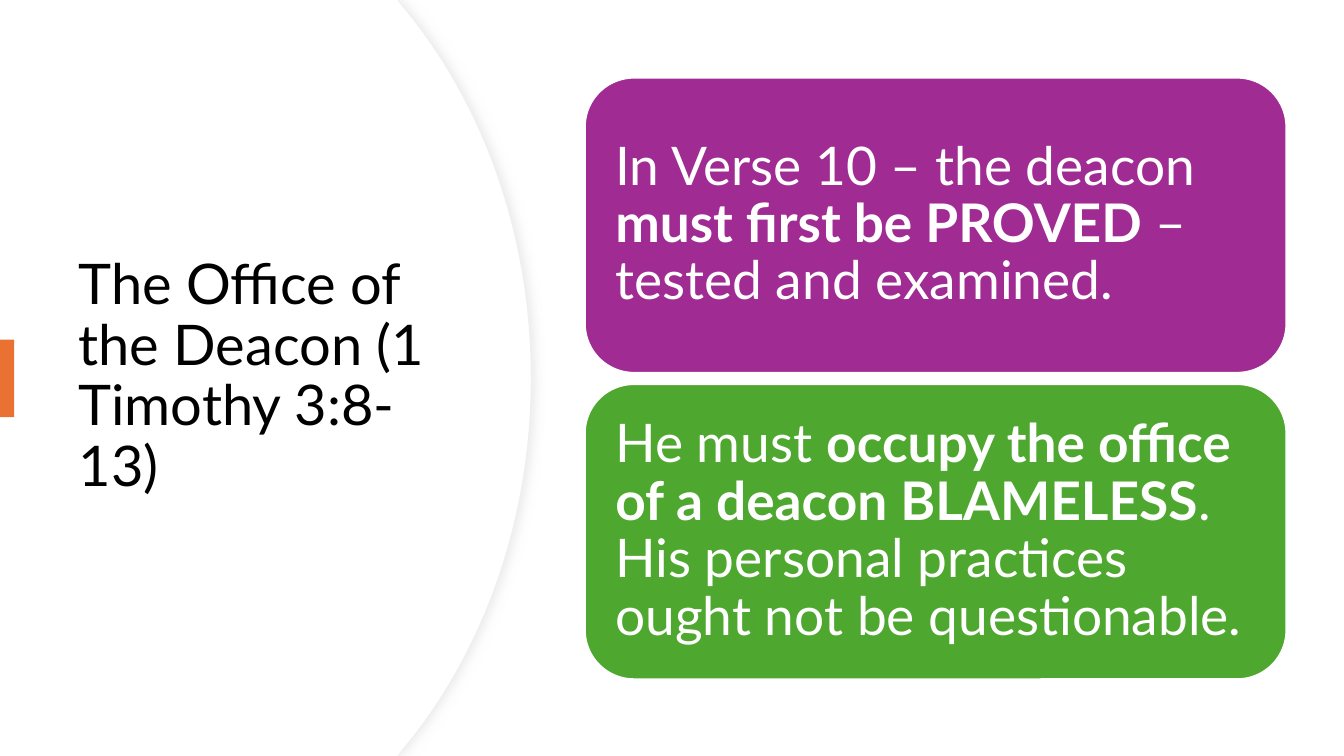
from dataclasses import dataclass

from lxml import etree
from pptx import Presentation
from pptx import util as u
from pptx.dml import color
from pptx.enum import shapes, text
from pptx.oxml import ns

COLORS = {
    "white": "FFFFFF",
    "black": "000000",
    "edge": "EFEFEF",
    "shadow": "D9D9D9",
    "accent": "E97132",
    "purple": "A02B93",
    "green": "4EA72E",
}
FONT = "Lato"
SLIDE_WIDTH, SLIDE_HEIGHT = 13.33, 7.5
CURVE_STEPS = 24
CARD_TOP, CARD_PITCH = 0.77, 3.04


@dataclass
class Phrase:
    wording: str
    bold: bool = False


@dataclass
class Card:
    fill: str
    phrases: list[Phrase]


CARDS = [
    Card("purple", [
        Phrase("In Verse 10 – the deacon "),
        Phrase("must first be PROVED ", True),
        Phrase("– tested and examined."),
    ]),
    Card("green", [
        Phrase("He must "),
        Phrase("occupy the office of a deacon BLAMELESS", True),
        Phrase(". His personal practices ought not be questionable."),
    ]),
]


def rgb(name: str) -> color.RGBColor:
    return color.RGBColor.from_string(COLORS[name])


def paint(shape, fill: str, line: str | None = None, width: float = 0) -> None:
    shape.shadow.inherit = False
    shape.fill.solid()
    shape.fill.fore_color.rgb = rgb(fill)
    if line is None:
        shape.line.fill.background()
    else:
        shape.line.color.rgb = rgb(line)
        shape.line.width = u.Pt(width)


def write(shape, phrases: list[Phrase], size: float, ink: str, inset: float) -> None:
    frame = shape.text_frame
    frame.word_wrap = True
    frame.auto_size = text.MSO_AUTO_SIZE.NONE
    frame.vertical_anchor = text.MSO_ANCHOR.MIDDLE
    frame.margin_left = frame.margin_right = u.Inches(inset)
    frame.margin_top = frame.margin_bottom = u.Inches(inset)
    paragraph = frame.paragraphs[0]
    paragraph.alignment = text.PP_ALIGN.LEFT
    paragraph.line_spacing = 0.9
    for phrase in phrases:
        run = paragraph.add_run()
        run.text = phrase.wording
        run.font.name = FONT
        run.font.size = u.Pt(size)
        run.font.bold = phrase.bold
        run.font.color.rgb = rgb(ink)


def bezier(start: float, first: float, second: float, end: float, t: float) -> float:
    s = 1 - t
    return s**3 * start + 3 * s**2 * t * first + 3 * s * t**2 * second + t**3 * end


def add_curved_panel(slide, right: float):
    middle = SLIDE_HEIGHT / 2
    shoulder = right - 1.26
    upper = [
        (bezier(shoulder, right - 0.48, right, right, step / CURVE_STEPS),
         bezier(0.08, 1.02, 2.32, middle, step / CURVE_STEPS))
        for step in range(CURVE_STEPS + 1)
    ]
    lower = [(x, SLIDE_HEIGHT - y) for x, y in reversed(upper[:-1])]
    outline = [(3.94, 0), *upper, *lower, (3.94, SLIDE_HEIGHT), (0, SLIDE_HEIGHT)]
    builder = slide.shapes.build_freeform(0, 0, scale=u.Inches(1) / 1000)
    builder.add_line_segments([(round(x * 1000), round(y * 1000)) for x, y in outline])
    return builder.convert_to_shape()


def add_shadow(shape) -> None:
    effects = shape._element.spPr.find(ns.qn("a:effectLst"))
    shadow = etree.SubElement(
        effects, ns.qn("a:outerShdw"),
        blurRad=str(u.Pt(7)), dist=str(u.Pt(3)), dir="0", algn="l", rotWithShape="0",
    )
    tint = etree.SubElement(shadow, ns.qn("a:srgbClr"), val=COLORS["shadow"])
    etree.SubElement(tint, ns.qn("a:alpha"), val="50000")


def add_title(slide) -> None:
    title = slide.shapes.title
    title.left, title.top = u.Inches(0.68), u.Inches(1.27)
    title.width, title.height = u.Inches(3.94), u.Inches(4.95)
    write(title, [Phrase("The Office of the Deacon (1 Timothy 3:8-13)")], 40, "black", 0.1)
    slide.shapes._spTree.append(title._element)


def add_card(slide, card: Card, top: float) -> None:
    shape = slide.shapes.add_shape(
        shapes.MSO_SHAPE.ROUNDED_RECTANGLE,
        u.Inches(5.8), u.Inches(top), u.Inches(6.96), u.Inches(2.93),
    )
    paint(shape, card.fill, "white", 1.5)
    write(shape, card.phrases, 38, "white", 0.16)


def main() -> None:
    presentation = Presentation()
    presentation.slide_width = u.Inches(SLIDE_WIDTH)
    presentation.slide_height = u.Inches(SLIDE_HEIGHT)
    slide = presentation.slides.add_slide(presentation.slide_layouts[5])

    edged_panel = add_curved_panel(slide, 5.27)
    paint(edged_panel, "white", "edge", 0.75)
    add_shadow(edged_panel)
    paint(add_curved_panel(slide, 5.26), "white")

    add_title(slide)
    marker = slide.shapes.add_shape(
        shapes.MSO_SHAPE.RECTANGLE,
        u.Inches(0), u.Inches(3.37), u.Inches(0.14), u.Inches(0.77),
    )
    paint(marker, "accent")
    for index, card in enumerate(CARDS):
        add_card(slide, card, CARD_TOP + index * CARD_PITCH)

    presentation.save("out.pptx")


if __name__ == "__main__":
    main()
